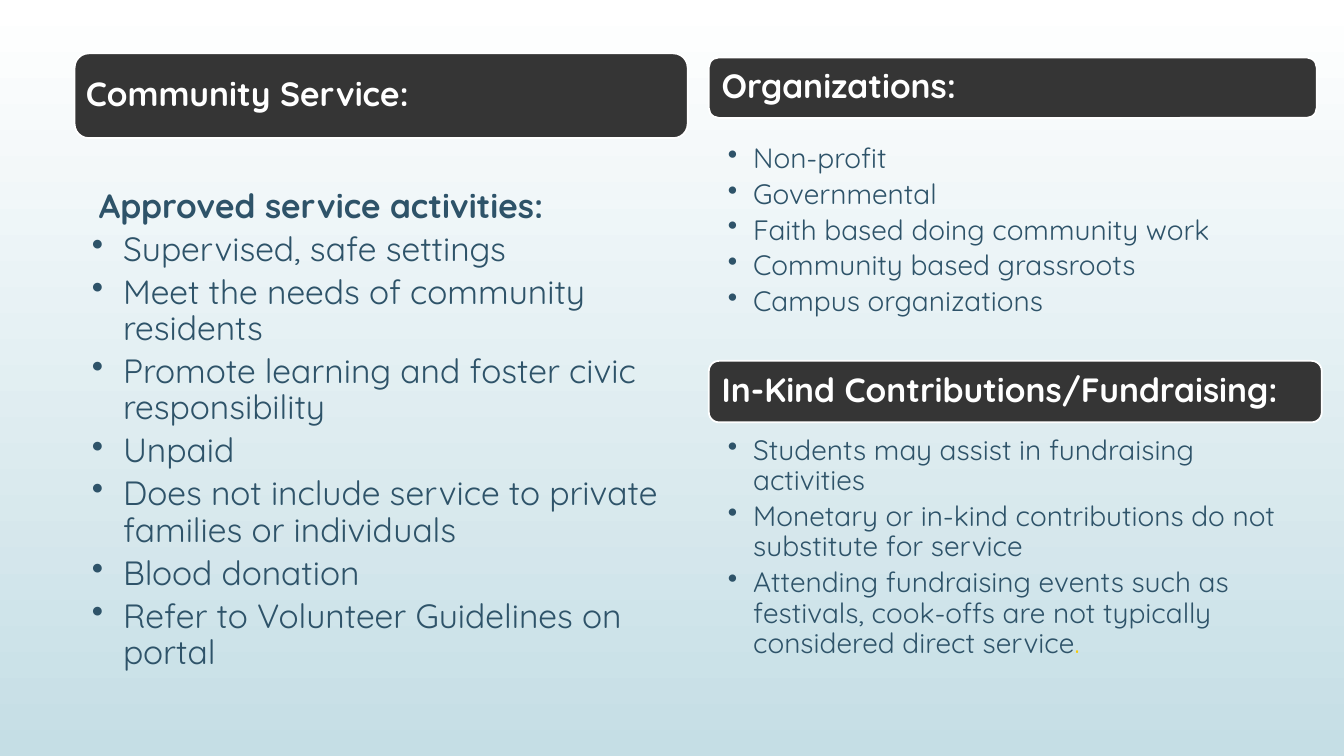
from dataclasses import dataclass

from lxml.etree import SubElement
from pptx import Presentation
from pptx.dml.color import RGBColor
from pptx.enum.shapes import MSO_SHAPE
from pptx.enum.text import MSO_ANCHOR, PP_ALIGN
from pptx.oxml.ns import qn
from pptx.util import Inches, Pt

FONT = "Quicksand"
WHITE, CHARCOAL, NAVY, YELLOW, PALE_BLUE = "FFFFFF", "353535", "2E5369", "F7CA09", "C5DEE5"


@dataclass
class Banner:
    title: str
    left: float
    top: float
    width: float
    height: float
    inset: float = 0.1


@dataclass
class BulletList:
    items: list[str]
    left: float
    top: float
    height: float
    size: int
    indent: float
    right_inset: float = 0.16
    heading: str = ""
    accent_end: str = ""


BANNERS = [
    Banner("Organizations:", 7.03, 0.57, 6.03, 0.6),
    Banner("In-Kind Contributions/Fundraising:", 7.03, 3.58, 6.08, 0.61),
    Banner("Community Service:", 0.74, 0.53, 6.08, 0.84, inset=0.07),
]

LISTS = [
    BulletList(
        ["Non-profit", "Governmental", "Faith based doing community work",
         "Community based grassroots", "Campus organizations"],
        7.03, 1.4, 2.11, 20, 0.25,
    ),
    BulletList(
        ["Students may assist in fundraising activities",
         "Monetary or in-kind contributions do not substitute for service",
         "Attending fundraising events such as festivals, cook-offs are not "
         "typically considered direct service"],
        7.03, 4.3, 2.6, 20, 0.25, accent_end=".",
    ),
    BulletList(
        ["Supervised, safe settings", "Meet the needs of community residents",
         "Promote learning and foster civic responsibility", "Unpaid",
         "Does not include service to private families or individuals",
         "Blood donation", "Refer to Volunteer Guidelines on portal"],
        0.72, 1.85, 4.53, 24, 0.31, right_inset=0.14,
        heading="Approved service activities:",
    ),
]


def rgb(color: str) -> RGBColor:
    return RGBColor.from_string(color)


def set_insets(frame, left: float, top: float, right: float, bottom: float) -> None:
    frame.margin_left, frame.margin_top = Inches(left), Inches(top)
    frame.margin_right, frame.margin_bottom = Inches(right), Inches(bottom)
    frame.word_wrap = True


def style(para, size: int, color: str, bold: bool = False) -> None:
    para.alignment = PP_ALIGN.LEFT
    para.line_spacing = 0.9
    para.font.name = FONT
    para.font.size = Pt(size)
    para.font.bold = bold
    para.font.color.rgb = rgb(color)


def set_indent(para, left: float, first: float, bullet: str = "") -> None:
    properties = para._p.get_or_add_pPr()
    properties.set("marL", str(Inches(left)))
    properties.set("indent", str(Inches(first)))
    if bullet:
        mark = SubElement(properties, qn("a:buChar"), char=bullet)
        default_font = properties.find(qn("a:defRPr"))
        if default_font is not None:
            default_font.addprevious(mark)


def add_banner(page, banner: Banner) -> None:
    box = page.shapes.add_shape(
        MSO_SHAPE.ROUNDED_RECTANGLE, Inches(banner.left), Inches(banner.top),
        Inches(banner.width), Inches(banner.height))
    box.shadow.inherit = False
    box.fill.solid()
    box.fill.fore_color.rgb = rgb(CHARCOAL)
    box.line.color.rgb = rgb(WHITE)
    box.line.width = Pt(1.25)
    frame = box.text_frame
    set_insets(frame, *[banner.inset] * 4)
    frame.vertical_anchor = MSO_ANCHOR.MIDDLE
    para = frame.paragraphs[0]
    para.text = banner.title
    style(para, 24, WHITE, bold=True)


def add_list(page, block: BulletList) -> None:
    box = page.shapes.add_textbox(
        Inches(block.left), Inches(block.top), Inches(6.08), Inches(block.height))
    frame = box.text_frame
    set_insets(frame, 0.19, 0.03, block.right_inset, 0.03)
    lines = ([block.heading] if block.heading else []) + block.items
    for index, line in enumerate(lines):
        para = frame.paragraphs[0] if index == 0 else frame.add_paragraph()
        para.text = line
        is_heading = line == block.heading
        style(para, block.size, NAVY, bold=is_heading)
        para.space_after = Pt(block.size * 0.2)
        if is_heading:
            set_indent(para, 0.07, 0)
        else:
            set_indent(para, block.indent, -block.indent, "•")
    if block.accent_end:
        span = frame.paragraphs[-1].add_run()
        span.text = block.accent_end
        span.font.color.rgb = rgb(YELLOW)


def paint_background(page) -> None:
    fill = page.background.fill
    fill.gradient()
    fill.gradient_angle = 270
    for stop, color in zip(fill.gradient_stops, (WHITE, PALE_BLUE)):
        stop.color.rgb = rgb(color)


def main() -> None:
    deck = Presentation()
    deck.slide_width, deck.slide_height = Inches(13.33), Inches(7.5)
    page = deck.slides.add_slide(deck.slide_layouts[6])
    paint_background(page)
    for banner in BANNERS:
        add_banner(page, banner)
    for block in LISTS:
        add_list(page, block)
    deck.save("out.pptx")


if __name__ == "__main__":
    main()
